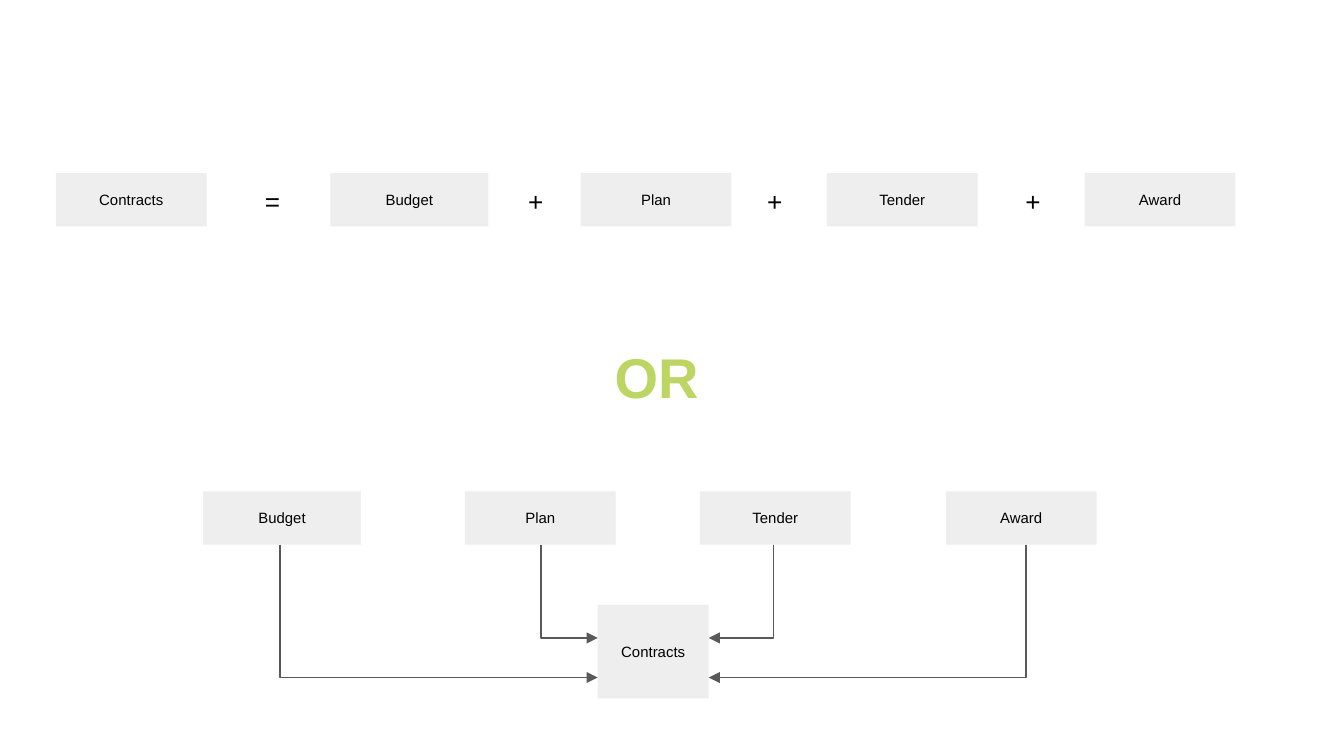
from dataclasses import dataclass

from lxml import etree
from pptx import Presentation
from pptx.dml.color import RGBColor
from pptx.enum.shapes import MSO_SHAPE
from pptx.enum.text import MSO_ANCHOR, PP_ALIGN
from pptx.oxml.ns import qn
from pptx.slide import Slide
from pptx.text.text import TextFrame
from pptx.util import Pt

RECTANGLE = MSO_SHAPE.RECTANGLE
TOP, MIDDLE = MSO_ANCHOR.TOP, MSO_ANCHOR.MIDDLE
LEFT, CENTER = PP_ALIGN.LEFT, PP_ALIGN.CENTER


@dataclass(frozen=True)
class Theme:
    font: str = "Arial"
    ink: RGBColor = RGBColor(0x00, 0x00, 0x00)
    box: RGBColor = RGBColor(0xEE, 0xEE, 0xEE)
    accent: RGBColor = RGBColor(0xBC, 0xD5, 0x63)
    arrow: RGBColor = RGBColor(0x59, 0x59, 0x59)
    box_size: float = 8
    sign_size: float = 14
    or_size: float = 30
    arrow_width: float = 0.75
    inset: float = 7.2


@dataclass(frozen=True)
class Label:
    """A piece of text and its frame, in points."""
    text: str
    left: float
    top: float
    width: float
    height: float


@dataclass(frozen=True)
class Elbow:
    """An arrow that runs down from a box, then sideways into Contracts."""
    start_x: float
    end_x: float
    end_y: float


THEME = Theme()
ROW_HEIGHT = 28.6
BOX_WIDTH, BUDGET_WIDTH = 80.8, 84.6

# Equation row
EQUATION_TOP = 92.7
EQUATION = {"Contracts": 30, "Budget": 177, "Plan": 311.1, "Tender": 443, "Award": 581.1}
SIGNS = [("=", 134.8), ("+", 275.8), ("+", 403.9), ("+", 542.2)]
SIGN_TOP, SIGN_WIDTH = 92.2, 26

# Flow diagram
FLOW_TOP = 263.2
FLOW = {"Budget": 108.8, "Plan": 249.1, "Tender": 375, "Award": 506.7}
TARGET = Label("Contracts", 320.2, 324, 59.5, 50.2)
TARGET_RIGHT = TARGET.left + TARGET.width
UPPER_ENTRY, LOWER_ENTRY = 341.8, 363
ELBOWS = [
    Elbow(150, TARGET.left, LOWER_ENTRY),
    Elbow(549.6, TARGET_RIGHT, LOWER_ENTRY),
    Elbow(289.9, TARGET.left, UPPER_ENTRY),
    Elbow(414.3, TARGET_RIGHT, UPPER_ENTRY),
]

OR_LABEL = Label("OR", 221.8, 176.4, 259.9, 46.1)


def write_text(frame: TextFrame, text: str, size: float, color: RGBColor,
               align: PP_ALIGN, anchor: MSO_ANCHOR, bold: bool = False) -> None:
    frame.word_wrap = True
    frame.vertical_anchor = anchor
    frame.margin_left = frame.margin_right = Pt(THEME.inset)
    frame.margin_top = frame.margin_bottom = Pt(THEME.inset)
    para = frame.paragraphs[0]
    para.text = text
    para.alignment = align
    para.font.name = THEME.font
    para.font.size = Pt(size)
    para.font.bold = bold
    para.font.color.rgb = color


def add_box(page: Slide, label: Label) -> None:
    box = page.shapes.add_shape(RECTANGLE, Pt(label.left), Pt(label.top),
                                Pt(label.width), Pt(label.height))
    box.shadow.inherit = False
    box.fill.solid()
    box.fill.fore_color.rgb = THEME.box
    box.line.fill.background()
    write_text(box.text_frame, label.text, THEME.box_size, THEME.ink, CENTER, MIDDLE)


def add_box_row(page: Slide, lefts: dict[str, float], top: float) -> None:
    for text, left in lefts.items():
        width = BUDGET_WIDTH if text == "Budget" else BOX_WIDTH
        add_box(page, Label(text, left, top, width, ROW_HEIGHT))


def add_text(page: Slide, label: Label, size: float, color: RGBColor,
             align: PP_ALIGN, bold: bool = False) -> None:
    box = page.shapes.add_textbox(Pt(label.left), Pt(label.top),
                                  Pt(label.width), Pt(label.height))
    write_text(box.text_frame, label.text, size, color, align, TOP, bold)


def add_elbow(page: Slide, elbow: Elbow) -> None:
    start_x, end_x, end_y = Pt(elbow.start_x), Pt(elbow.end_x), Pt(elbow.end_y)
    builder = page.shapes.build_freeform(start_x, Pt(FLOW_TOP + ROW_HEIGHT))
    builder.add_line_segments([(start_x, end_y), (end_x, end_y)], close=False)
    arrow = builder.convert_to_shape()
    arrow.shadow.inherit = False
    arrow.fill.background()
    arrow.line.color.rgb = THEME.arrow
    arrow.line.width = Pt(THEME.arrow_width)
    line = arrow.element.spPr.find(qn("a:ln"))
    etree.SubElement(line, qn("a:tailEnd"), type="triangle", w="med", len="med")


def main() -> None:
    deck = Presentation()
    deck.slide_width, deck.slide_height = Pt(720), Pt(405)
    page = deck.slides.add_slide(deck.slide_layouts[6])

    # Equation row
    add_box_row(page, EQUATION, EQUATION_TOP)
    for sign, left in SIGNS:
        add_text(page, Label(sign, left, SIGN_TOP, SIGN_WIDTH, ROW_HEIGHT),
                 THEME.sign_size, THEME.ink, LEFT)

    # Divider word
    add_text(page, OR_LABEL, THEME.or_size, THEME.accent, CENTER, bold=True)

    # Flow diagram
    add_box_row(page, FLOW, FLOW_TOP)
    add_box(page, TARGET)
    for elbow in ELBOWS:
        add_elbow(page, elbow)

    deck.save("out.pptx")


if __name__ == "__main__":
    main()
